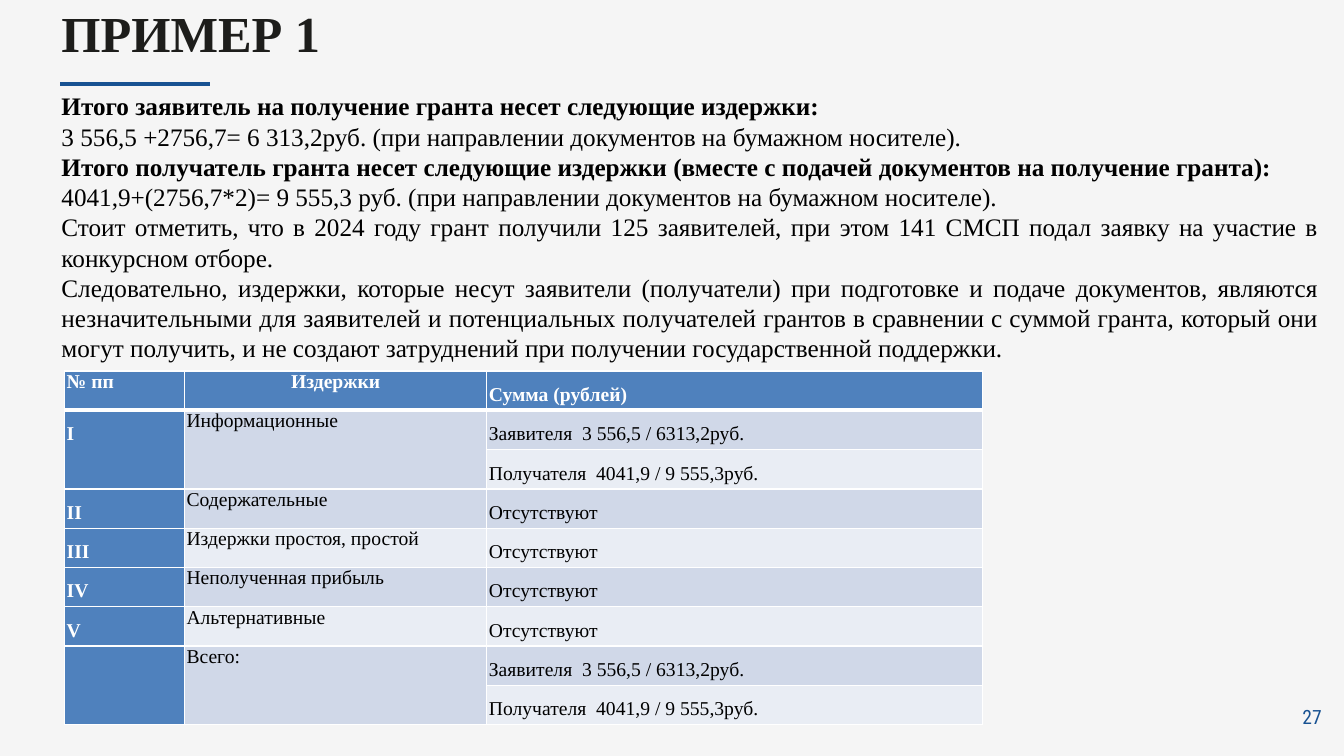
from dataclasses import dataclass

import pptx
import pptx.dml.color
import pptx.enum.shapes
import pptx.enum.text
import pptx.oxml
import pptx.oxml.ns
import pptx.util

Cm = pptx.util.Cm
Pt = pptx.util.Pt
ALIGN = pptx.enum.text.PP_ALIGN


@dataclass(frozen=True)
class Theme:
    background: str = "F5F5F5"
    accent: str = "185292"
    title: str = "1D1D1B"
    text: str = "000000"
    white: str = "FFFFFF"
    header: str = "4F81BD"
    band_dark: str = "D0D8E8"
    band_light: str = "E9EDF4"
    serif: str = "Times New Roman"
    condensed: str = "Roboto Condensed"
    title_size: int = 36
    body_size: int = 18
    small_size: int = 14


THEME = Theme()

BODY = [
    ("Итого заявитель на получение гранта несет следующие издержки:", True),
    ("3 556,5 +2756,7= 6 313,2руб. (при направлении документов на бумажном носителе).", False),
    ("Итого получатель гранта несет следующие издержки (вместе с подачей документов "
     "на получение гранта):", True),
    ("4041,9+(2756,7*2)= 9 555,3 руб. (при направлении документов на бумажном носителе).", False),
    ("Стоит отметить, что в 2024 году грант получили 125 заявителей, при этом 141 СМСП "
     "подал заявку на участие в конкурсном отборе.", False),
    ("Следовательно, издержки, которые несут заявители (получатели) при подготовке и подаче "
     "документов, являются незначительными для заявителей и потенциальных получателей грантов "
     "в сравнении с суммой гранта, который они могут получить, и не создают затруднений "
     "при получении государственной поддержки.", False),
]

APPLICANT = "Заявителя  3 556,5 / 6313,2руб."
RECIPIENT = "Получателя  4041,9 / 9 555,3руб."
COSTS = [
    ("№ пп", "Издержки", "Сумма (рублей)"),
    ("I", "Информационные", APPLICANT),
    ("", "", RECIPIENT),
    ("II", "Содержательные", "Отсутствуют"),
    ("III", "Издержки простоя, простой", "Отсутствуют"),
    ("IV", "Неполученная прибыль", "Отсутствуют"),
    ("V", "Альтернативные", "Отсутствуют"),
    ("", "Всего:", APPLICANT),
    ("", "", RECIPIENT),
]
DOUBLE_ROWS = (1, 7)
COLUMN_WIDTHS = (3.02, 7.62, 12.5)
ROW_HEIGHT = 0.99


def rgb(color):
    return pptx.dml.color.RGBColor.from_string(color)


def add_run(p, text, size, color, bold=False, font=THEME.serif):
    r = p.add_run()
    r.text = text
    r.font.name = font
    r.font.size = Pt(size)
    r.font.bold = bold
    r.font.color.rgb = rgb(color)
    return r


def add_text_frame(s, left, top, width, height, insets=None):
    sp = s.shapes.add_textbox(Cm(left), Cm(top), Cm(width), Cm(height))
    tf = sp.text_frame
    tf.word_wrap = True
    if insets:
        tf.margin_left, tf.margin_top = (Cm(inset) for inset in insets)
        tf.margin_right = tf.margin_bottom = 0
    return tf


def add_title(s, text):
    tf = add_text_frame(s, 1.52, 0.74, 9.07, 1.14, (0.03, 0.56))
    p = tf.paragraphs[0]
    p.line_spacing = Pt(10.6)
    add_run(p, text, THEME.title_size, THEME.title, bold=True)


def add_rule(s):
    line = s.shapes.add_connector(
        pptx.enum.shapes.MSO_CONNECTOR.STRAIGHT, Cm(1.52), Cm(2.11), Cm(5.28), Cm(2.11))
    line.line.color.rgb = rgb(THEME.accent)
    line.line.width = Pt(3)
    sp_pr = line._element.spPr
    sp_pr.append(pptx.oxml.parse_xml(f'<a:effectLst {pptx.oxml.ns.nsdecls("a")}/>'))


def add_body(s):
    tf = add_text_frame(s, 1.3, 2.16, 32.18, 7.19)
    for i, (text, bold) in enumerate(BODY):
        p = tf.add_paragraph() if i else tf.paragraphs[0]
        p.alignment = ALIGN.JUSTIFY
        add_run(p, text, THEME.body_size, THEME.text, bold)


def add_page_number(s, number):
    tf = add_text_frame(s, 32.72, 17.78, 0.94, 0.56, (0.1, 0))
    p = tf.paragraphs[0]
    p.line_spacing = Pt(16.4)
    r = add_run(p, number, THEME.small_size, THEME.accent, font=THEME.condensed)
    r.font._element.set("spc", "10")


def set_borders(cell, bottom):
    tc_pr = cell._tc.get_or_add_tcPr()
    for side, width in (("L", 1), ("R", 1), ("T", 1), ("B", bottom)):
        tc_pr.append(pptx.oxml.parse_xml(
            f'<a:ln{side} {pptx.oxml.ns.nsdecls("a")} w="{Pt(width)}"><a:solidFill>'
            f'<a:srgbClr val="{THEME.white}"/></a:solidFill></a:ln{side}>'))


def format_cell(cell, row, col, text):
    heading = row == 0 or col == 0
    band = THEME.band_dark if row % 2 else THEME.band_light
    if row == 3 or row == 5:
        band = THEME.band_dark
    set_borders(cell, 1 if row else 3)
    cell.fill.solid()
    cell.fill.fore_color.rgb = rgb(THEME.header if heading else band)
    cell.margin_left = cell.margin_right = Cm(0.05)
    cell.margin_top = cell.margin_bottom = 0
    if text:
        p = cell.text_frame.paragraphs[0]
        p.alignment = ALIGN.CENTER if (row, col) == (0, 1) else ALIGN.JUSTIFY
        if col == 2 or (col == 0 and row > 0):
            p.line_spacing = 1.6
        add_run(p, text, THEME.small_size, THEME.white if heading else THEME.text, heading)


def add_cost_table(s):
    table = s.shapes.add_table(
        len(COSTS), len(COLUMN_WIDTHS), Cm(1.63), Cm(9.35),
        Cm(sum(COLUMN_WIDTHS)), Cm(ROW_HEIGHT * len(COSTS))).table
    table.first_row = table.horz_banding = False
    for column, width in zip(table.columns, COLUMN_WIDTHS):
        column.width = Cm(width)
    for row, texts in enumerate(COSTS):
        table.rows[row].height = Cm(ROW_HEIGHT)
        for col, text in enumerate(texts):
            format_cell(table.cell(row, col), row, col, text)
    for row in DOUBLE_ROWS:
        for col in (0, 1):
            table.cell(row, col).merge(table.cell(row + 1, col))


def main():
    prs = pptx.Presentation()
    prs.slide_width, prs.slide_height = Cm(33.87), Cm(19.05)
    s = prs.slides.add_slide(prs.slide_layouts[6])
    s.background.fill.solid()
    s.background.fill.fore_color.rgb = rgb(THEME.background)
    add_rule(s)
    add_page_number(s, "27")
    add_body(s)
    add_cost_table(s)
    add_title(s, "ПРИМЕР 1")
    prs.save("out.pptx")


if __name__ == "__main__":
    main()
